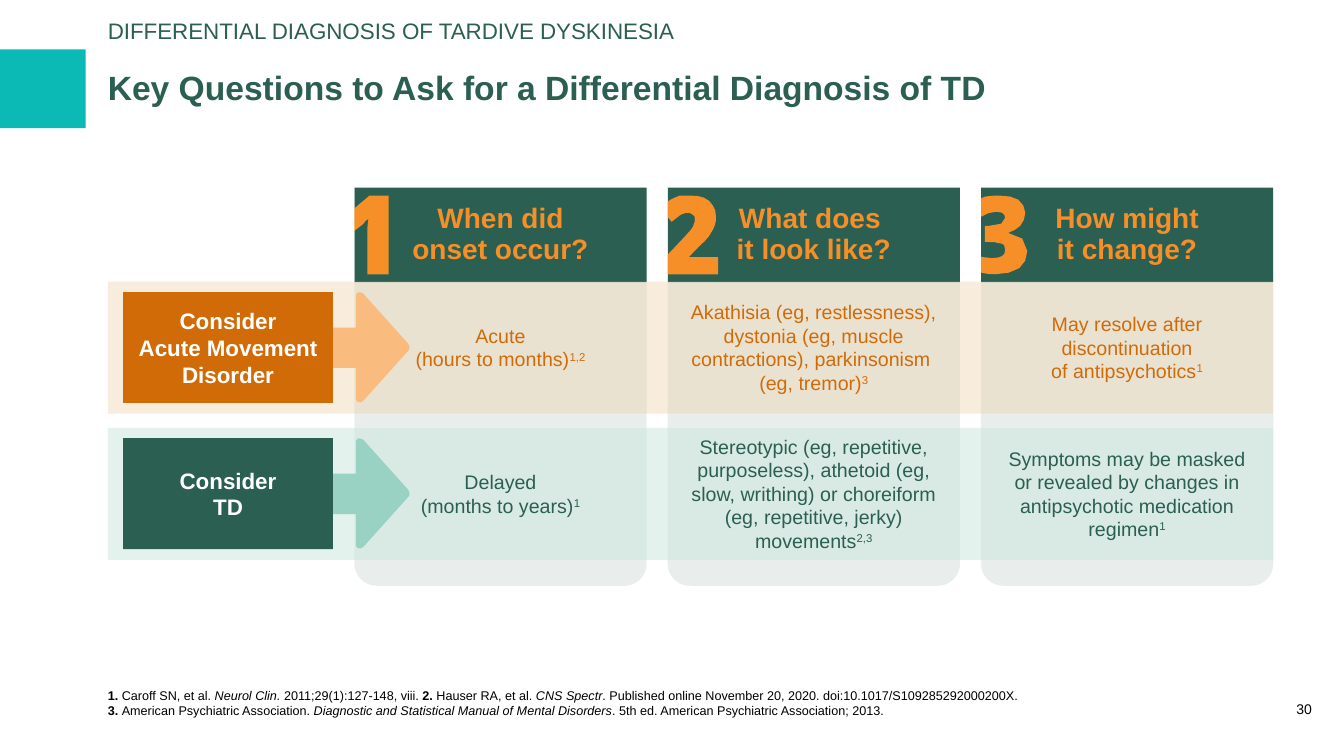
from dataclasses import dataclass

from lxml import etree
from pptx import Presentation
from pptx.dml.color import RGBColor
from pptx.enum.shapes import MSO_SHAPE
from pptx.enum.text import MSO_ANCHOR, PP_ALIGN
from pptx.oxml.ns import qn
from pptx.util import Pt

RECT, ROUND = MSO_SHAPE.RECTANGLE, MSO_SHAPE.ROUND_2_SAME_RECTANGLE
LEFT, CENTER = PP_ALIGN.LEFT, PP_ALIGN.CENTER
MIDDLE, BOTTOM = MSO_ANCHOR.MIDDLE, MSO_ANCHOR.BOTTOM


@dataclass(frozen=True)
class Theme:
    font: str = "Arial"
    teal: str = "0BBAB4"
    green: str = "2B5F51"
    mint: str = "CCE8E0"
    sage: str = "99D1C2"
    rust: str = "D06B08"
    sand: str = "ECCE9D"
    peach: str = "FABC7E"
    orange: str = "F78F28"
    white: str = "FFFFFF"
    black: str = "000000"
    title: int = 24
    head: int = 20
    label: int = 16
    body: int = 14
    page: int = 10
    note: int = 9


T = Theme()
UNIT = 0.72  # outline grid step, in points

# Outlines: pairs are line ends, sixes are curves (two handles and an end)
ONE = [(34, 86), (13, 86), (13, 45), (13, 40, 13, 35, 14, 31),
       (12, 32, 10, 34, 9, 36), (0, 43), (-11, 30), (15, 8), (34, 8)]
TWO = [(50, 86), (-6, 86), (-6, 73), (12, 54), (18, 48, 21, 44, 23, 42),
       (25, 39, 26, 38, 26, 36), (27, 35, 27, 33, 27, 32),
       (27, 29, 27, 28, 25, 27), (24, 26, 22, 25, 20, 25),
       (18, 25, 15, 26, 13, 27), (10, 29, 8, 31, 4, 34), (-7, 20),
       (-3, 16, 0, 13, 3, 12), (6, 11, 8, 9, 12, 8), (15, 8, 18, 8, 22, 8),
       (27, 8, 32, 8, 36, 10), (40, 12, 43, 14, 45, 18),
       (47, 21, 48, 24, 48, 29), (48, 32, 48, 34, 47, 37),
       (46, 40, 45, 42, 43, 45), (42, 47, 40, 50, 37, 53),
       (34, 55, 29, 61, 21, 69), (50, 69)]
THREE = [(44, 25), (44, 30, 42, 34, 39, 38), (36, 41, 32, 43, 27, 45),
         (39, 46, 46, 53, 46, 63), (46, 70, 43, 76, 38, 80),
         (32, 84, 24, 86, 14, 86), (10, 86, 6, 86, 3, 85),
         (0, 84, -4, 84, -8, 82), (-8, 65), (-5, 67, -2, 68, 2, 69),
         (5, 69, 8, 70, 11, 70), (16, 70, 19, 69, 21, 68),
         (23, 67, 24, 65, 24, 62), (24, 60, 23, 58, 23, 57),
         (22, 56, 20, 55, 17, 55), (15, 54, 12, 54, 8, 54), (4, 54),
         (4, 38), (8, 38), (19, 38, 24, 35, 24, 30),
         (24, 28, 23, 26, 21, 25), (20, 25, 18, 24, 15, 24),
         (10, 24, 5, 26, 0, 29), (-8, 15), (-4, 13, 0, 10, 4, 9),
         (8, 8, 13, 8, 19, 8), (26, 8, 32, 9, 37, 12),
         (41, 15, 44, 20, 44, 25)]
ARROW = [(0, 75), (0, 35), (63, 35), (63, 6), (63, 3, 63, 1, 65, 0),
         (67, 0, 69, 0, 70, 1), (71, 2), (115, 51),
         (116, 53, 117, 55, 116, 57), (115, 58), (71, 107),
         (69, 109, 67, 110, 65, 109), (63, 108, 63, 106, 63, 104), (63, 75)]

# Each paragraph is a string or a list of (words, mark): b, i or ^ for raised
COLS = [(ONE, ["When did\nonset occur?"]),
        (TWO, ["What does ", "it look like?"]),
        (THREE, ["How might", "it change?"])]
ROWS = [
    ("Consider\nAcute Movement Disorder", T.rust, T.sand, 35, T.peach, [
        ("Acute\n(hours to months)", "1,2"),
        ("Akathisia (eg, restlessness),\ndystonia (eg, muscle "
         "contractions), parkinsonism \n(eg, tremor)", "3"),
        ("May resolve after\ndiscontinuation\nof antipsychotics", "1")]),
    ("Consider\nTD", T.green, T.mint, 55, T.sage, [
        ("Delayed\n(months to years)", "1"),
        ("Stereotypic (eg, repetitive, purposeless), athetoid (eg, slow, "
         "writhing) or choreiform (eg, repetitive, jerky) movements", "2,3"),
        ("Symptoms may be masked\nor revealed by changes in "
         "antipsychotic medication regimen", "1")]),
]
NOTES = [("1. ", "b"), ("Caroff SN, et al. ", ""), ("Neurol Clin.", "i"),
         (" 2011;29(1):127-148, viii. ", ""), ("2. ", "b"),
         ("Hauser RA, et al. ", ""), ("CNS Spectr", "i"),
         (". Published online November 20, 2020. "
          "doi:10.1017/S109285292000200X. \n", ""), ("3. ", "b"),
         ("American Psychiatric Association. ", ""),
         ("Diagnostic and Statistical Manual of Mental Disorders", "i"),
         (". 5th ed. American Psychiatric Association; 2013.", "")]


def paint(shape, color, alpha=100):
    shape.shadow.inherit = False
    shape.line.fill.background()
    shape.fill.solid()
    shape.fill.fore_color.rgb = RGBColor.from_string(color)
    if alpha < 100:
        tone = shape._element.spPr.find(".//" + qn("a:srgbClr"))
        etree.SubElement(tone, qn("a:alpha"), val=str(alpha * 1000))
    return shape


def block(slide, box, color, kind=RECT, alpha=100):
    shape = slide.shapes.add_shape(kind, *map(Pt, box))
    return paint(shape, color, alpha)


def trace(slide, x, y, steps, color):
    """Draw an outline from its top left corner, halving each curve."""
    spots = []
    for step in steps:
        if len(step) == 6:
            a, b, c, d = spots[-1], step[:2], step[2:4], step[4:]
            spots.append([(a[k] + 3 * b[k] + 3 * c[k] + d[k]) / 8
                          for k in (0, 1)])
        spots.append(step[-2:])
    spots = [(Pt(x + p * UNIT), Pt(y + q * UNIT)) for p, q in spots]
    path = slide.shapes.build_freeform(*spots[0])
    path.add_line_segments(spots[1:], close=True)
    paint(path.convert_to_shape(), color)


def write(shape, paras, size, color, bold=False, align=CENTER,
          anchor=MIDDLE, inset=(0, 0), space=1.0):
    frame = shape.text_frame
    frame.word_wrap = True
    frame.vertical_anchor = anchor
    frame.margin_left = frame.margin_right = Pt(inset[0])
    frame.margin_top = frame.margin_bottom = Pt(inset[1])
    for i, runs in enumerate(paras):
        para = frame.add_paragraph() if i else frame.paragraphs[0]
        para.alignment, para.line_spacing = align, space
        for words, mark in [(runs, "")] if isinstance(runs, str) else runs:
            for j, part in enumerate(words.split("\n")):
                if j:
                    para.add_line_break()
                if not part:
                    continue
                run = para.add_run()
                run.text = part
                font = run.font
                font.name, font.size = T.font, Pt(size)
                font.color.rgb = RGBColor.from_string(color)
                font.bold, font.italic = bold or mark == "b", mark == "i"
                if mark == "^":
                    run._r.get_or_add_rPr().set("baseline", "30000")


def label(slide, box, paras, size, color, **style):
    write(slide.shapes.add_textbox(*map(Pt, box)), paras, size, color, **style)


def header(slide, x, y, w):
    block(slide, (0, y + 22.7, 61.2, 56.2), T.teal)
    label(slide, (x, y, w, 20.2),
          ["DIFFERENTIAL DIAGNOSIS OF TARDIVE DYSKINESIA"],
          T.label, T.green, align=LEFT, space=0.95)
    label(slide, (x, y + 15.5, w, 71.3),
          ["Key Questions to Ask for a Differential Diagnosis of TD"],
          T.title, T.green, bold=True, align=LEFT, space=0.95)


def column(slide, x, y, w, digit, ask):
    card = block(slide, (x, y + 64.8, w, 219.6), T.green, ROUND, 10)
    card.adjustments[0], card.adjustments[1] = 0.076, 0
    card.rotation = 180
    head = block(slide, (x, y, w, 67.5), T.green)
    write(head, ask, T.head, T.orange, bold=True, inset=(6.5, 5), space=0.9)
    # Numeral, trimmed at the column edge
    trace(slide, x, y, digit, T.orange)
    block(slide, (x - 13, y, 13, 67.5), T.white)


def row(slide, x, y, w, spots, wide, name, color, band, alpha, tint, cells):
    block(slide, (x, y, w, 94.3), band, alpha=alpha)
    trace(slide, x + 131.8, y + 7.6, ARROW, tint)
    write(block(slide, (x + 11, y + 7.4, 149.8, 79.2), color), [name],
          T.label, T.white, bold=True, inset=(7.2, 3.6))
    for spot, (words, ref) in zip(spots, cells):
        label(slide, (spot, y + 9.8, wide, 74.2),
              [[(words, ""), (ref, "^")]], T.body, color, inset=(4.5, 3.6))


def matrix(slide, x, y, w):
    wide, pitch = 208.8, 223.8
    spots = [x + w - wide - pitch * k for k in (2, 1, 0)]
    for spot, col in zip(spots, COLS):
        column(slide, spot, y, wide, *col)
    for i, line in enumerate(ROWS):
        row(slide, x, y + 67.2 + 104.4 * i, w, spots, wide, *line)


def footer(slide, x, y, w):
    label(slide, (x, y, w, 40.3), [NOTES], T.note, T.black,
          align=LEFT, anchor=BOTTOM)
    label(slide, (x + w + 10.1, y + 8.8, 23.8, 31), ["30"], T.page, T.black,
          anchor=BOTTOM, space=0.95)


def main():
    deck = Presentation()
    deck.slide_width, deck.slide_height = Pt(960), Pt(540)
    slide = deck.slides.add_slide(deck.slide_layouts[6])
    header(slide, 77, 12.6, 710)
    matrix(slide, 77, 134, 832.5)
    footer(slide, 77, 472.6, 832.5)
    deck.save("out.pptx")


if __name__ == "__main__":
    main()
